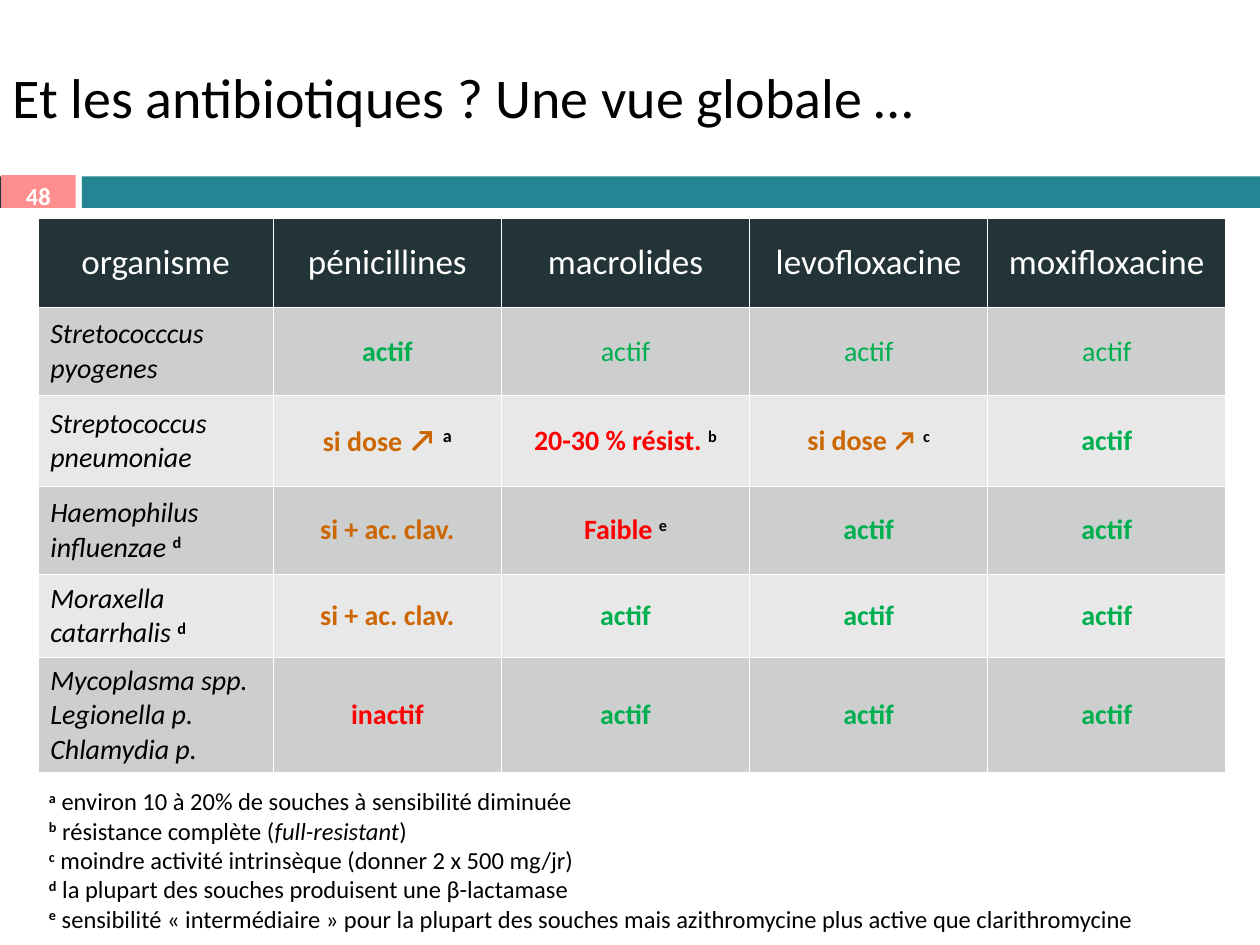
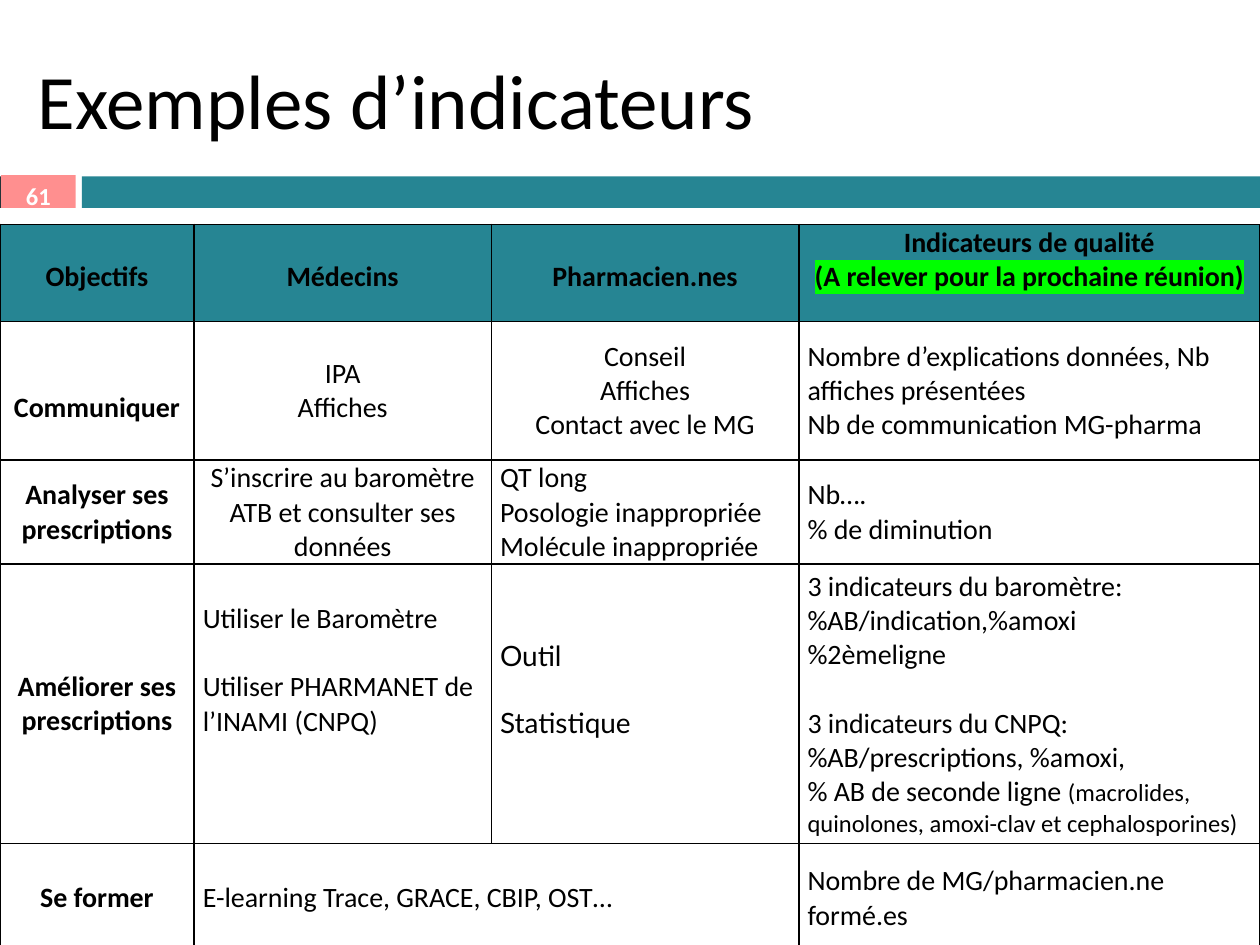
"""Build two slides on antibiotic activity and on indicator examples."""
from dataclasses import dataclass

from lxml import etree
from pptx import Presentation
from pptx.dml.color import RGBColor
from pptx.enum.shapes import MSO_SHAPE
from pptx.enum.text import MSO_ANCHOR, MSO_AUTO_SIZE, PP_ALIGN
from pptx.oxml.ns import qn
from pptx.util import Inches, Pt

LEFT, CENTER = PP_ALIGN.LEFT, PP_ALIGN.CENTER
TOP, MIDDLE = MSO_ANCHOR.TOP, MSO_ANCHOR.MIDDLE
RECTANGLE = MSO_SHAPE.RECTANGLE
NO_AUTOFIT = MSO_AUTO_SIZE.NONE
TITLE_ONLY = 5


@dataclass(frozen=True)
class Theme:
    """Colours, fonts and type sizes of the deck."""
    black: str = "000000"
    white: str = "FFFFFF"
    dark: str = "233438"
    teal: str = "268593"
    pink: str = "FF8F8F"
    band_dark: str = "CDCECE"
    band_light: str = "E8E8E8"
    green: str = "00B050"
    orange: str = "CC6600"
    red: str = "FF0000"
    marker: str = "00FF00"
    font: str = "Calibri"
    second_font: str = "Lato"
    small: int = 14
    body: int = 16
    arrow: int = 18
    header: int = 20
    line_gap: float = 19.5


THEME = Theme()
GAP = None
NOTE = dict(color=THEME.black, bold=True, italic=False, raised=True)
ACTIVE = dict(color=THEME.green, bold=True)
LIMITED = dict(color=THEME.orange, bold=True)
WEAK = dict(color=THEME.red, bold=True)
NAME = dict(italic=True, align=LEFT)
BOLD = dict(bold=True)
LIST = dict(align=LEFT)

YES = (["actif"], ACTIVE)
YES_PLAIN = (["actif"], dict(color=THEME.green))
WITH_ACID = (["si + ac. clav."], LIMITED)

DRUGS = ["organisme", "pénicillines", "macrolides", "levofloxacine", "moxifloxacine"]
ORGANISMS = [
    [(["Stretococccus pyogenes"], NAME), YES, YES_PLAIN, YES_PLAIN, YES_PLAIN],
    [(["Streptococcus pneumoniae"], NAME),
     ([["si dose", (" ↗ ", dict(size=THEME.arrow)), ("a", dict(NOTE, size=THEME.arrow))]],
      LIMITED),
     ([["20-30 % résist. ", ("b", NOTE)]], WEAK),
     ([["si dose ↗ ", ("c", NOTE)]], LIMITED), YES],
    [([["Haemophilus influenzae ", ("d", NOTE)]], NAME), WITH_ACID,
     ([["Faible ", ("e", NOTE)]], WEAK), YES, YES],
    [(["Moraxella", ["catarrhalis ", ("d", NOTE)]], NAME), WITH_ACID, YES, YES, YES],
    [(["Mycoplasma spp.", "Legionella p.", "Chlamydia p."], NAME),
     (["inactif"], WEAK), YES, YES, YES],
]
FOOTNOTES = [
    [("a", NOTE), " environ 10 à 20% de souches à sensibilité diminuée"],
    [("b", NOTE), " résistance complète (", ("full-resistant", dict(italic=True)), ")"],
    [("c", NOTE), " moindre activité intrinsèque (donner 2 x 500 mg/jr)"],
    [("d", NOTE), " la plupart des souches produisent une β-lactamase"],
    [("e", NOTE), " sensibilité « intermédiaire » pour la plupart des souches "
                  "mais azithromycine plus active que clarithromycine"],
]

HEADING = dict(bold=True, anchor=TOP, inset_top=0.28)
INDICATOR_HEADS = [
    (["Objectifs"], HEADING),
    (["Médecins"], HEADING),
    (["Pharmacien.nes"], HEADING),
    (["Indicateurs de qualité",
      [("(A relever pour la prochaine réunion)", dict(highlight=THEME.marker))]],
     dict(bold=True, anchor=TOP)),
]
INDICATORS = [
    [(["Communiquer"], dict(bold=True, inset_top=0.28)),
     (["IPA", "Affiches"], {}),
     (["Conseil", "Affiches", "Contact avec le MG"], {}),
     (["Nombre d’explications données, Nb affiches présentées",
       "Nb de communication MG-pharma"], LIST)],
    [(["Analyser ses prescriptions"], BOLD),
     (["S’inscrire au baromètre ATB et consulter ses données"], {}),
     (["QT long", "Posologie inappropriée", "Molécule inappropriée"], LIST),
     (["Nb….", "% de diminution"], LIST)],
    [(["Améliorer ses prescriptions"], BOLD),
     (["Utiliser le Baromètre", GAP, "Utiliser PHARMANET de l’INAMI (CNPQ)"],
      dict(align=LEFT, inset_bottom=0.54)),
     (["Outil", GAP, "Statistique"],
      dict(align=LEFT, font=THEME.second_font, inset_bottom=0.24)),
     (["3 indicateurs du baromètre: %AB/indication,%amoxi", "%2èmeligne", GAP,
       "3 indicateurs du CNPQ: %AB/prescriptions, %amoxi,",
       ["% AB de seconde ligne ",
        ("(macrolides, quinolones, amoxi-clav et cephalosporines)",
         dict(size=THEME.small))]], LIST)],
    [(["Se former"], BOLD),
     (["E-learning Trace, GRACE, CBIP, OST…"], LIST),
     GAP,
     (["Nombre de MG/pharmacien.ne formé.es"], LIST)],
]


def rgb(color):
    """Turn a hex string into a colour."""
    return RGBColor.from_string(color)


def format_span(span, size, color, font, bold=False, italic=False, raised=False,
                highlight=None):
    """Apply character formatting to one run."""
    span.font.size, span.font.name = Pt(size), font
    span.font.bold, span.font.italic = bold, italic
    span.font.color.rgb = rgb(color)
    properties = span._r.get_or_add_rPr()
    if raised:
        properties.set("baseline", "30000")
    if highlight:
        mark = etree.Element(qn("a:highlight"))
        etree.SubElement(mark, qn("a:srgbClr"), val=highlight)
        properties.find(qn("a:solidFill")).addnext(mark)


def write(frame, lines, align=LEFT, size=THEME.body, color=THEME.black,
          font=THEME.font, **style):
    """Write lines of plain or formatted spans; GAP leaves one line free."""
    base = dict(style, size=size, color=color, font=font)
    para, gap = None, False
    for line in lines:
        if line is GAP:
            gap = True
            continue
        para = frame.add_paragraph() if para is not None else frame.paragraphs[0]
        para.alignment = align
        if gap:
            para.space_before = Pt(THEME.line_gap)
            gap = False
        for part in [line] if isinstance(line, str) else line:
            text, changes = (part, {}) if isinstance(part, str) else part
            span = para.add_run()
            span.text = text
            format_span(span, **{**base, **changes})


def add_bar(page, place, color):
    """Draw one plain rectangle of the band."""
    bar = page.shapes.add_shape(RECTANGLE, *map(Inches, place))
    bar.shadow.inherit = False
    bar.fill.solid()
    bar.fill.fore_color.rgb = rgb(color)
    bar.line.fill.background()
    return bar


def start_page(deck, number, title, place, size):
    """Add a page with its band, page number and title."""
    page = deck.slides.add_slide(deck.slide_layouts[TITLE_ONLY])
    add_bar(page, (0, 1.4, 0.58, 0.25), THEME.dark)
    add_bar(page, (0.65, 1.4, 9.35, 0.25), THEME.teal)
    badge = add_bar(page, (0.01, 1.39, 0.59, 0.26), THEME.pink)
    badge.text_frame.vertical_anchor = TOP
    write(badge.text_frame, [str(number)], align=CENTER, size=THEME.small,
          color=THEME.white, bold=True)
    box = page.shapes.title
    box.left, box.top, box.width, box.height = map(Inches, place)
    box.text_frame.auto_size = NO_AUTOFIT
    box.text_frame.vertical_anchor = MIDDLE
    write(box.text_frame, [title], size=size)
    return page


def set_borders(cell, color):
    """Give a cell one-point borders on all sides."""
    properties = cell._tc.get_or_add_tcPr()
    for side in ("lnL", "lnR", "lnT", "lnB"):
        line = etree.SubElement(properties, qn(f"a:{side}"), w=str(Pt(1)))
        fill = etree.SubElement(line, qn("a:solidFill"))
        etree.SubElement(fill, qn("a:srgbClr"), val=color)


def fill_cell(cell, content, fill, border, insets, anchor=MIDDLE, inset_top=None,
              inset_bottom=None, align=CENTER, **style):
    """Format one table cell and write its lines."""
    side, top, bottom = insets
    cell.margin_left = cell.margin_right = Inches(side)
    cell.margin_top = Inches(top if inset_top is None else inset_top)
    cell.margin_bottom = Inches(bottom if inset_bottom is None else inset_bottom)
    cell.vertical_anchor = anchor
    set_borders(cell, border)
    if fill:
        cell.fill.solid()
        cell.fill.fore_color.rgb = rgb(fill)
    else:
        cell.fill.background()
    write(cell.text_frame, content, align=align, **style)


def add_grid(page, left, top, widths, heights, rows, fills, border, insets):
    """Add a table; a GAP cell merges into the cell on its left."""
    grid = page.shapes.add_table(len(heights), len(widths), Inches(left), Inches(top),
                                 Inches(sum(widths)), Inches(sum(heights))).table
    grid.first_row = grid.horz_banding = False
    for column, width in zip(grid.columns, widths):
        column.width = Inches(width)
    for row, height in zip(grid.rows, heights):
        row.height = Inches(height)
    for r, (cells, fill) in enumerate(zip(rows, fills)):
        for c, entry in enumerate(cells):
            if entry is GAP:
                grid.cell(r, c - 1).merge(grid.cell(r, c))
                continue
            content, style = entry
            fill_cell(grid.cell(r, c), content, fill, border, insets, **style)


def add_antibiotics(deck):
    """Build the overview of antibiotics by organism."""
    page = start_page(deck, 48, "Et les antibiotiques ? Une vue globale …",
                      (0, 0.38, 9.96, 0.77), 32)
    header = [([drug], dict(size=THEME.header, color=THEME.white)) for drug in DRUGS]
    bands = [THEME.band_light if row % 2 else THEME.band_dark
             for row in range(len(ORGANISMS))]
    add_grid(page, 0.3, 1.73, [1.87, 1.81, 1.97, 1.89, 1.89],
             [0.71, 0.7, 0.72, 0.7, 0.66, 0.9], [header] + ORGANISMS,
             [THEME.dark] + bands, THEME.white, (0.1, 0.05, 0.05))
    box = page.shapes.add_textbox(*map(Inches, (0.29, 6.19, 9.02, 1.28)))
    box.text_frame.word_wrap = True
    write(box.text_frame, FOOTNOTES, size=THEME.small)


def add_indicators(deck):
    """Build the table of indicator examples."""
    page = start_page(deck, 61, "Exemples d’indicateurs", (0.2, 0.24, 8.92, 1.08), 44)
    add_grid(page, 0, 1.78, [1.54, 2.36, 2.44, 3.66], [0.77, 1.1, 0.82, 2.22, 0.86],
             [INDICATOR_HEADS] + INDICATORS, [THEME.teal] + [None] * len(INDICATORS),
             THEME.black, (0.07, 0.01, 0))


def main():
    """Create and save the deck."""
    deck = Presentation()
    deck.slide_width, deck.slide_height = Inches(10), Inches(7.5)
    add_antibiotics(deck)
    add_indicators(deck)
    deck.save("out.pptx")


if __name__ == "__main__":
    main()
